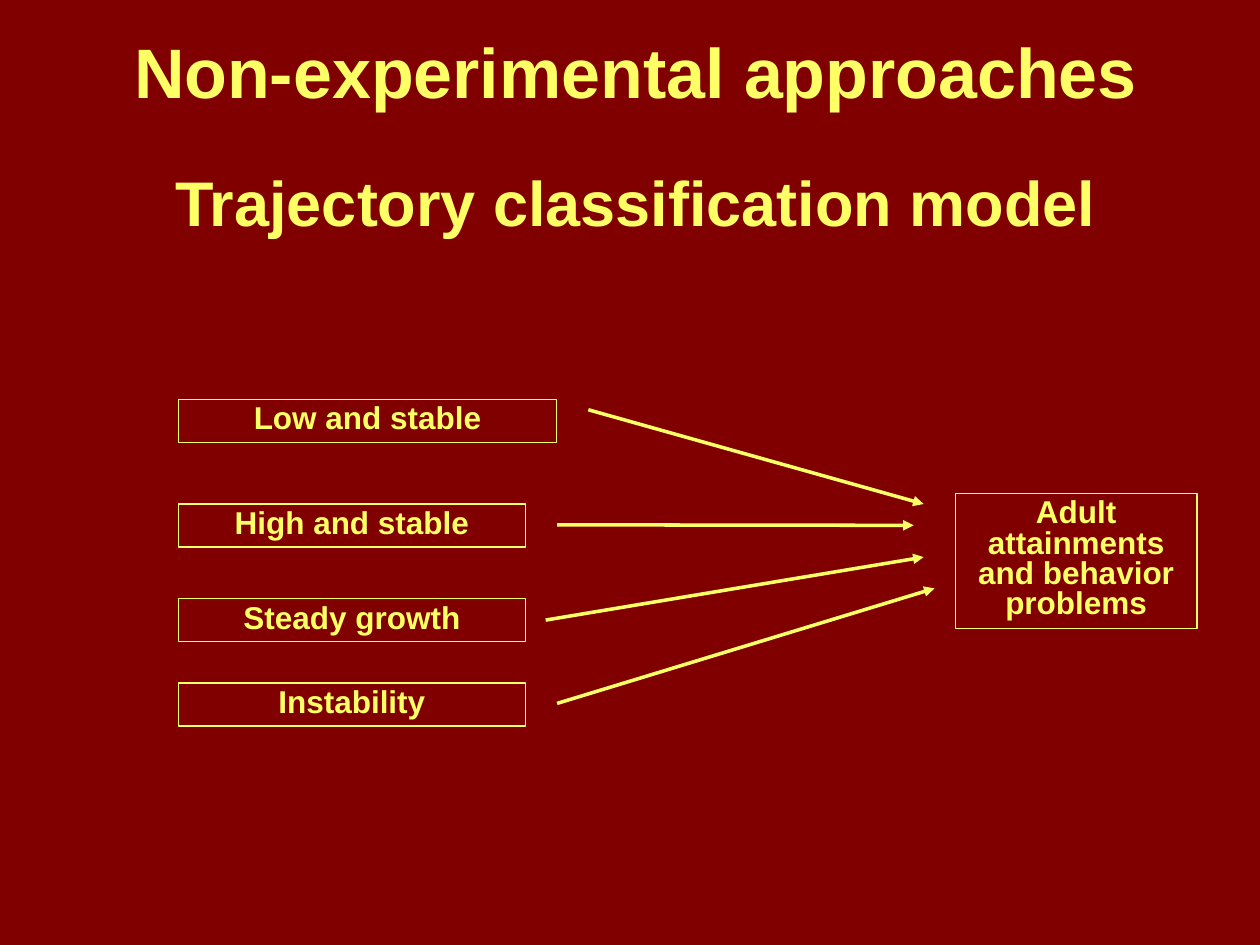
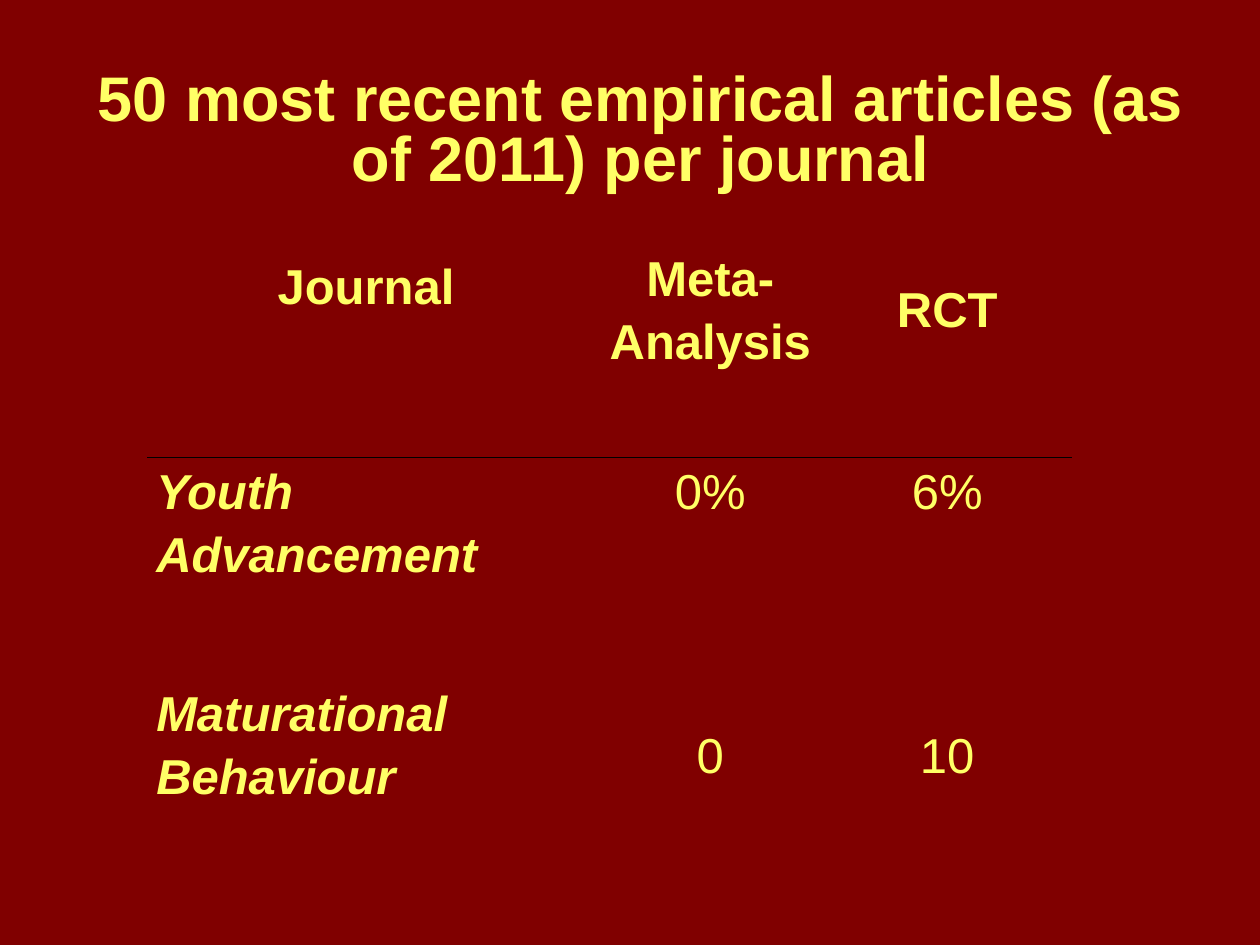
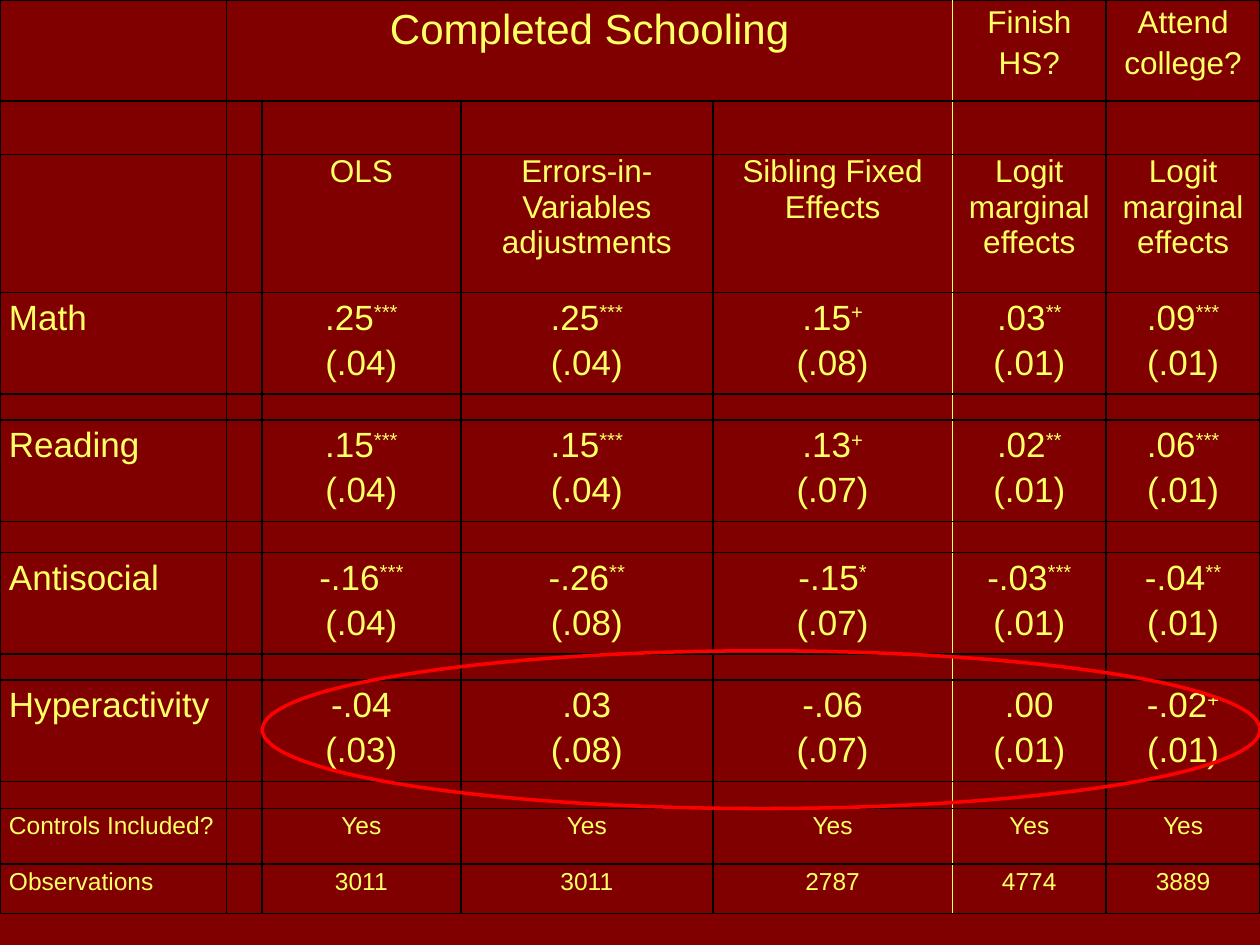
"""Build three dark red slides: a trajectory diagram, a journal table and a regression table."""
from lxml.etree import SubElement
from pptx import Presentation
from pptx.dml.color import RGBColor
from pptx.enum.shapes import MSO_CONNECTOR, MSO_SHAPE
from pptx.enum.text import MSO_ANCHOR, PP_ALIGN
from pptx.oxml.ns import qn
from pptx.util import Cm, Pt

COLORS = {"ground": "800000", "ink": "FFFF66", "grid": "000000", "ring": "FF0000"}
FONT = "Arial"

MODEL_TITLE = [("Non-experimental approaches", 40), ("Trajectory classification model", 36)]
TRAJECTORIES = [
    ("Low and stable", 8.05, 7.62, ((11.86, 8.26), (18.62, 10.16))),
    ("High and stable", 10.16, 6.99, ((11.23, 10.58), (18.42, 10.59))),
    ("Steady growth", 12.07, 6.99, ((11, 12.5), (18.62, 11.23))),
    ("Instability", 13.77, 6.99, ((11.23, 14.18), (18.84, 11.86))),
]
OUTCOME = ("Adult attainments and behavior problems", (19.26, 9.95, 4.87, 2.72))

JOURNAL_TITLE = [("50 most recent empirical articles (as of 2011) per journal", 36)]
JOURNAL_COLUMNS = [9.09, 4.52, 5.03]
JOURNAL_ROWS = [
    (3.07, ["Journal\u00a0", "Meta-Analysis", "RCT"]),
    (1.5, [""] * 3),
    (2.97, ["Youth Advancement", "0%", "6%"]),
    (1.5, [""] * 3),
    (2.97, ["Maturational Behaviour", "0", "10"]),
]

EFFECT_COLUMNS = [4.57, 0.71, 4.01, 5.08, 4.83, 3.1, 3.1]
DIVIDER_COLUMN = 4
GAP = [""] * 7
EFFECT_ROWS = [
    (2.04, 18, ["", "Completed Schooling", "", "", "", "Finish HS?", "Attend college?"]),
    (1.07, 6, GAP),
    (2.79, 18, ["", "", "OLS", "Errors-in-Variables adjustments", "Sibling Fixed Effects",
                "Logit marginal effects", "Logit marginal effects"]),
    (2.04, 20, ["Math", "", ".25*** (.04)", ".25*** (.04)", ".15+ (.08)",
                ".03** (.01)", ".09*** (.01)"]),
    (0.53, 6, GAP),
    (2.04, 20, ["Reading", "", ".15*** (.04)", ".15*** (.04)", ".13+ (.07)",
                ".02** (.01)", ".06*** (.01)"]),
    (0.63, 6, GAP),
    (2.04, 20, ["Antisocial", "", "-.16*** (.04)", "-.26** (.08)", "-.15* (.07)",
                "-.03*** (.01)", "-.04** (.01)"]),
    (0.53, 6, GAP),
    (2.04, 20, ["Hyperactivity", "", "-.04 (.03)", ".03 (.08)", "-.06 (.07)",
                ".00 (.01)", "-.02+ (.01)"]),
    (0.55, 6, GAP),
    (1.12, 14, ["Controls Included?", "", "Yes", "Yes", "Yes", "Yes", "Yes"]),
    (0.99, 14, ["Observations", "", "3011", "3011", "2787", "4774", "3889"]),
]


def color(name):
    return RGBColor.from_string(COLORS[name])


def style(para, size, bold=False, italic=False, align=PP_ALIGN.CENTER, spacing=0.8):
    para.alignment, para.line_spacing = align, spacing
    font = para.font
    font.name, font.size, font.bold, font.italic = FONT, Pt(size), bold, italic
    font.color.rgb = color("ink")


def add_page(deck):
    page = deck.slides.add_slide(deck.slide_layouts[6])
    page.background.fill.solid()
    page.background.fill.fore_color.rgb = color("ground")
    return page


def add_title(page, lines, place):
    frame = page.shapes.add_textbox(*map(Cm, place)).text_frame
    frame.word_wrap, frame.vertical_anchor = True, MSO_ANCHOR.MIDDLE
    for index, (text, size) in enumerate(lines):
        para = frame.add_paragraph() if index else frame.paragraphs[0]
        para.text = text
        style(para, size, bold=True)
        if index:
            para.space_before = Pt(38)


def add_outline(page, kind, place, line_color, width):
    shape = page.shapes.add_shape(kind, *map(Cm, place))
    shape.shadow.inherit = False
    shape.fill.background()
    shape.line.color.rgb, shape.line.width = color(line_color), Pt(width)
    return shape


def add_node(page, text, place):
    frame = add_outline(page, MSO_SHAPE.RECTANGLE, place, "ink", 0.75).text_frame
    frame.word_wrap, frame.vertical_anchor = True, MSO_ANCHOR.TOP
    frame.text = text
    style(frame.paragraphs[0], 18, bold=True)


def add_arrow(page, start, end):
    arrow = page.shapes.add_connector(MSO_CONNECTOR.STRAIGHT, *map(Cm, start + end))
    arrow.line.color.rgb, arrow.line.width = color("ink"), Pt(2)
    SubElement(arrow.line._get_or_add_ln(), qn("a:tailEnd"), type="triangle")
    SubElement(arrow._element.spPr, qn("a:effectLst"))


def add_grid(page, left, top, columns, heights):
    place = map(Cm, (left, top, sum(columns), sum(heights)))
    table = page.shapes.add_table(len(heights), len(columns), *place).table
    table.first_row = table.horz_banding = False
    for column, width in zip(table.columns, columns):
        column.width = Cm(width)
    for row, height in zip(table.rows, heights):
        row.height = Cm(height)
    return table


def dress_cell(cell, borders):
    """Set margins, then draw the sides named in borders and leave the others bare."""
    cell.margin_left = cell.margin_right = Cm(0.18)
    cell.margin_top = cell.margin_bottom = 0
    properties = cell._tc.get_or_add_tcPr()
    for side in "LRTB":
        line = SubElement(properties, qn(f"a:ln{side}"), w=str(Pt(1)))
        if side in borders:
            fill = SubElement(line, qn("a:solidFill"))
            SubElement(fill, qn("a:srgbClr"), val=COLORS[borders[side]])
        else:
            SubElement(line, qn("a:noFill"))
    cell.fill.background()


def write_estimate(para, text):
    """Write a coefficient with raised significance marks above its standard error."""
    estimate, error = text.split(" ")
    value = estimate.rstrip("*+")
    para.add_run().text = value
    if estimate != value:
        marks = para.add_run()
        marks.text = estimate[len(value):]
        marks._r.get_or_add_rPr().set("baseline", "30000")
    para.add_line_break()
    para.add_run().text = error


def build_model(deck):
    page = add_page(deck)
    add_title(page, MODEL_TITLE, (0.85, 0.85, 23.92, 4))
    for text, top, width, (start, end) in TRAJECTORIES:
        add_node(page, text, (3.6, top, width, 0.87))
        add_arrow(page, start, end)
    add_node(page, *OUTCOME)


def build_journals(deck):
    page = add_page(deck)
    table = add_grid(page, 2.97, 4.65, JOURNAL_COLUMNS, [height for height, _ in JOURNAL_ROWS])
    rules = {1: {"B": "grid"}, 2: {"T": "grid"}}
    for row, (_, texts) in enumerate(JOURNAL_ROWS):
        for column, text in enumerate(texts):
            cell = table.cell(row, column)
            dress_cell(cell, rules.get(row, {}))
            para = cell.text_frame.paragraphs[0]
            para.text = text
            name = row > 0 and column == 0
            style(para, 28, bold=row == 0 or name, italic=name, spacing=1.15,
                  align=PP_ALIGN.LEFT if name else PP_ALIGN.CENTER)
            if column and row in (0, 4):
                cell.vertical_anchor = MSO_ANCHOR.MIDDLE
    heading = table.cell(0, 0)
    heading.vertical_anchor, heading.margin_bottom = MSO_ANCHOR.BOTTOM, Cm(1.37)
    add_title(page, JOURNAL_TITLE, (1.7, 1.48, 22.43, 2.41))


def build_effects(deck):
    page = add_page(deck)
    table = add_grid(page, 0, 0, EFFECT_COLUMNS, [height for height, _, _ in EFFECT_ROWS])
    heading = table.cell(0, 1)
    heading.merge(table.cell(0, DIVIDER_COLUMN))
    for row, (_, size, texts) in enumerate(EFFECT_ROWS):
        for column, text in enumerate(texts):
            cell = table.cell(row, column)
            borders = dict.fromkeys("LRTB", "grid")
            if column == DIVIDER_COLUMN or cell.is_merge_origin:
                borders["R"] = "ink"
            elif column == DIVIDER_COLUMN + 1:
                borders["L"] = "ink"
            dress_cell(cell, borders)
            para = cell.text_frame.paragraphs[0]
            if "(" in text:
                write_estimate(para, text)
            else:
                para.text = text
            text_size = 24 if cell.is_merge_origin else size if text else 6
            style(para, text_size, spacing=1 if row == 2 else 1.15,
                  align=PP_ALIGN.CENTER if column else PP_ALIGN.LEFT)
            if text:
                para.space_after = Pt(6)
    add_outline(page, MSO_SHAPE.OVAL, (5.29, 13.12, 20.11, 3.18), "ring", 2)


def main():
    deck = Presentation()
    deck.slide_width, deck.slide_height = Cm(25.4), Cm(19.05)
    build_model(deck)
    build_journals(deck)
    build_effects(deck)
    deck.save("out.pptx")


if __name__ == "__main__":
    main()
